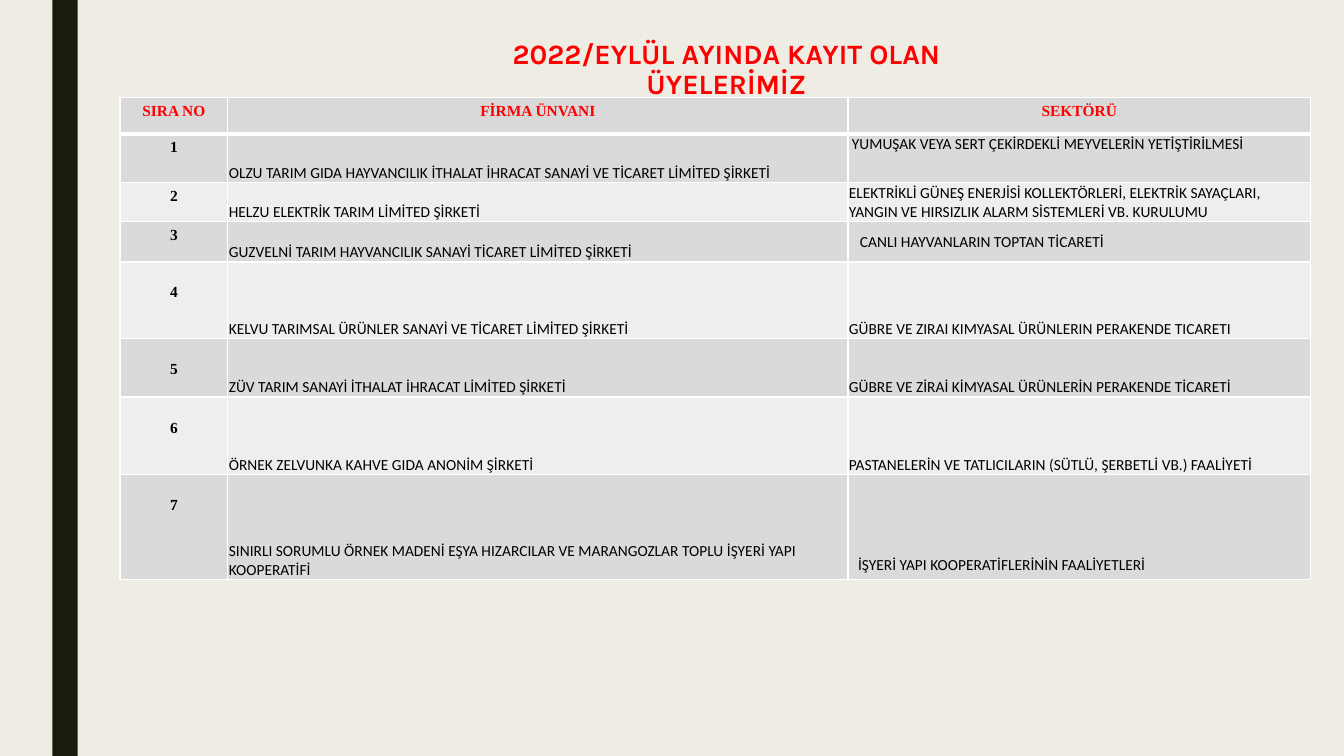
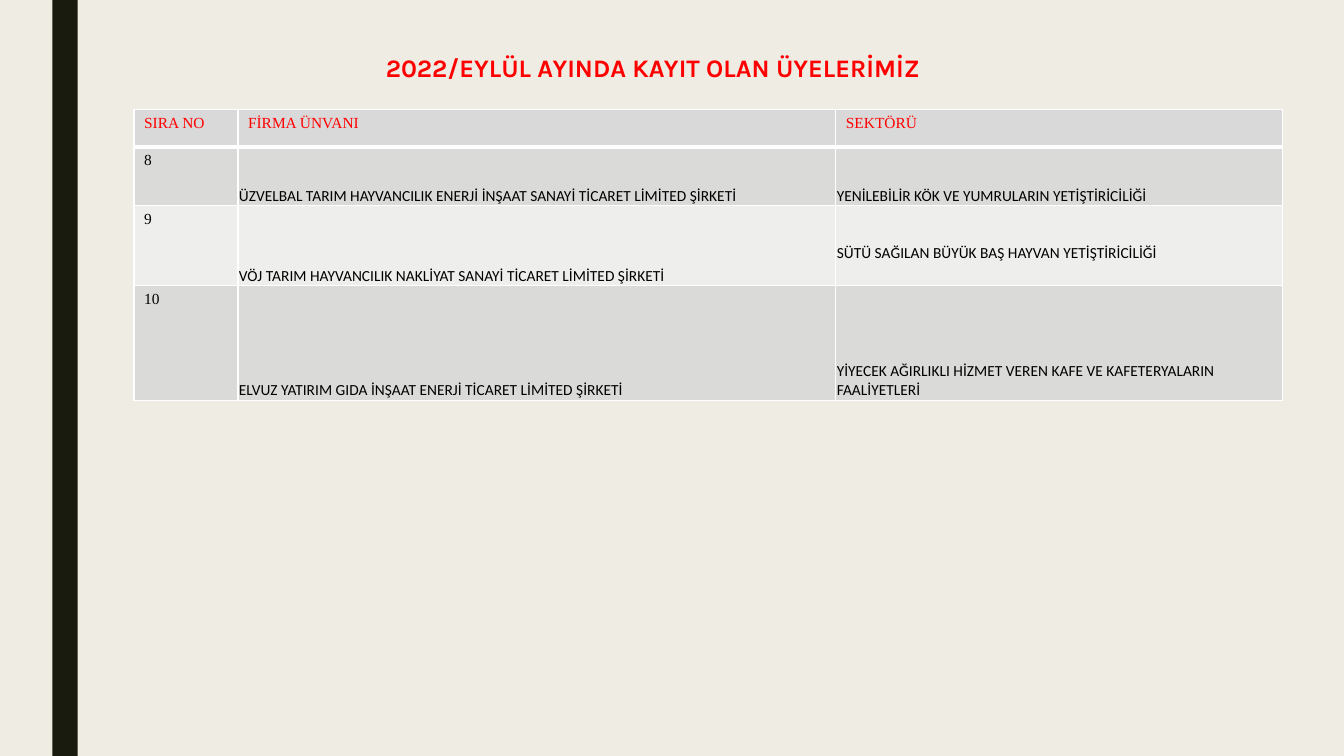
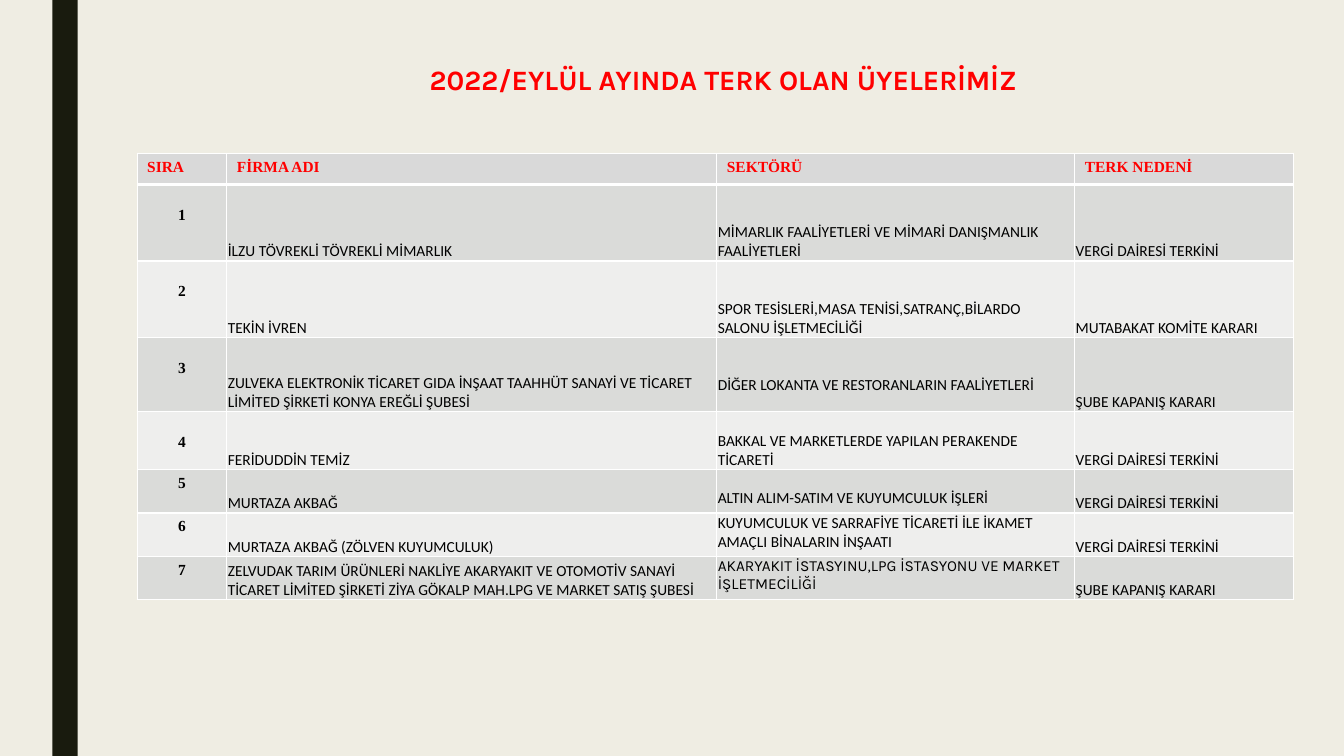
from dataclasses import dataclass

from lxml.etree import SubElement
from pptx import Presentation
from pptx.dml.color import RGBColor
from pptx.enum.shapes import MSO_SHAPE
from pptx.enum.text import MSO_ANCHOR, PP_ALIGN
from pptx.oxml.ns import qn
from pptx.util import Inches, Pt


@dataclass(frozen=True)
class Theme:
    background: str = "EFEDE3"
    band: str = "191B0E"
    accent: str = "FF0000"
    ink: str = "000000"
    border: str = "FFFFFF"
    header_fill: str = "D9D9D9"
    row_fills: tuple = ("DADBD9", "EEEEED")
    title_font: str = "Karla"
    label_font: str = "Times New Roman"
    body_font: str = "Calibri"
    title_size: int = 20
    small_title_size: int = 18
    table_size: int = 11
    thin: int = 1
    thick: int = 3


THEME = Theme()
PADDED = (0.1, 0.05, 0.1, 0.05)
LOWERED = (0.1, 0.22, 0.1, 0.05)


@dataclass(frozen=True)
class Entry:
    """Body text of a table cell; insets are left, top, right, bottom."""
    text: str
    anchor: MSO_ANCHOR = MSO_ANCHOR.BOTTOM
    insets: tuple = (0.01, 0.01, 0.01, 0)
    font: str = THEME.body_font


def top_entry(text, left=0.01, top=0.01, font=THEME.body_font):
    return Entry(text, MSO_ANCHOR.TOP, (left, top, 0.01, 0), font)


def write_text(frame, text, *, font, size, color=THEME.ink, bold=False,
               align=PP_ALIGN.LEFT, line_spacing=None):
    frame.word_wrap = True
    paragraph = frame.paragraphs[0]
    paragraph.alignment = align
    if line_spacing:
        paragraph.line_spacing = line_spacing
    run = paragraph.add_run()
    run.text = text
    run.font.name = font
    run.font.size = Pt(size)
    run.font.bold = bold
    run.font.color.rgb = RGBColor.from_string(color)


def add_member_slide(prs):
    """Add a slide with the shared background and side band."""
    slide = prs.slides.add_slide(prs.slide_layouts[6])
    slide.background.fill.solid()
    slide.background.fill.fore_color.rgb = RGBColor.from_string(THEME.background)
    band = slide.shapes.add_shape(MSO_SHAPE.RECTANGLE, Inches(0.52), 0,
                                  Inches(0.25), prs.slide_height)
    band.shadow.inherit = False
    band.fill.solid()
    band.fill.fore_color.rgb = RGBColor.from_string(THEME.band)
    band.line.fill.background()
    return slide


def add_title(slide, text, left, top, width, height,
              size=THEME.title_size, line_spacing=0.89):
    title = slide.shapes.add_textbox(Inches(left), Inches(top),
                                     Inches(width), Inches(height))
    write_text(title.text_frame, text, font=THEME.title_font, size=size,
               color=THEME.accent, bold=True, align=PP_ALIGN.CENTER,
               line_spacing=line_spacing)


def set_borders(cell, top, bottom):
    properties = cell._tc.get_or_add_tcPr()
    widths = {"lnL": THEME.thin, "lnR": THEME.thin, "lnT": top, "lnB": bottom}
    for position, (side, width) in enumerate(widths.items()):
        line = SubElement(properties, qn(f"a:{side}"), w=str(Pt(width)))
        fill = SubElement(line, qn("a:solidFill"))
        SubElement(fill, qn("a:srgbClr"), val=THEME.border)
        properties.insert(position, line)


def fill_cell(cell, entry, fill, **text_format):
    cell.fill.solid()
    cell.fill.fore_color.rgb = RGBColor.from_string(fill)
    cell.vertical_anchor = entry.anchor
    (cell.margin_left, cell.margin_top,
     cell.margin_right, cell.margin_bottom) = map(Inches, entry.insets)
    write_text(cell.text_frame, entry.text, font=entry.font,
               size=THEME.table_size, **text_format)


def add_member_table(slide, left, top, widths, heights, headers, members, *,
                     first_number=1, lowered=(), bold=True,
                     header_align=PP_ALIGN.LEFT, number_align=PP_ALIGN.CENTER):
    """Number the members and tabulate them; lowered numbers sit a line down."""
    table = slide.shapes.add_table(
        len(heights), len(widths), Inches(left), Inches(top),
        Inches(sum(widths)), Inches(sum(heights))).table
    for column, width in zip(table.columns, widths):
        column.width = Inches(width)
    for row, height in zip(table.rows, heights):
        row.height = Inches(height)

    for column, header in enumerate(headers):
        cell = table.cell(0, column)
        label = Entry(header, MSO_ANCHOR.TOP, PADDED, THEME.label_font)
        fill_cell(cell, label, THEME.header_fill, color=THEME.accent,
                  bold=bold, align=header_align)
        set_borders(cell, THEME.thin, THEME.thick)

    for row, member in enumerate(members, 1):
        number = first_number + row - 1
        fill = THEME.row_fills[(row - 1) % 2]
        label = Entry(str(number), MSO_ANCHOR.TOP,
                      LOWERED if number in lowered else PADDED, THEME.label_font)
        fill_cell(table.cell(row, 0), label, fill, bold=bold, align=number_align)
        for column, value in enumerate(member, 1):
            entry = value if isinstance(value, Entry) else Entry(value)
            fill_cell(table.cell(row, column), entry, fill)
        for cell in table.rows[row].cells:
            set_borders(cell, THEME.thick if row == 1 else THEME.thin, THEME.thin)


JOINED_TITLE = "2022/EYLÜL AYINDA KAYIT OLAN ÜYELERİMİZ"
LEFT_TITLE = "2022/EYLÜL AYINDA TERK OLAN ÜYELERİMİZ"
JOINED_HEADERS = ("SIRA NO", "FİRMA ÜNVANI", "SEKTÖRÜ")
LEFT_HEADERS = ("SIRA", "FİRMA ADI", "SEKTÖRÜ", "TERK NEDENİ")
TAX_OFFICE = "VERGİ DAİRESİ TERKİNİ"
BRANCH_CLOSED = "ŞUBE KAPANIŞ KARARI"

JOINED_FIRST = [
    ("OLZU TARIM GIDA HAYVANCILIK İTHALAT İHRACAT SANAYİ VE TİCARET LİMİTED ŞİRKETİ",
     top_entry("YUMUŞAK VEYA SERT ÇEKİRDEKLİ MEYVELERİN YETİŞTİRİLMESİ", left=0.04)),
    ("HELZU ELEKTRİK TARIM LİMİTED ŞİRKETİ",
     top_entry("ELEKTRİKLİ GÜNEŞ ENERJİSİ KOLLEKTÖRLERİ, ELEKTRİK SAYAÇLARI, "
               "YANGIN VE HIRSIZLIK ALARM SİSTEMLERİ VB. KURULUMU")),
    ("GUZVELNİ TARIM HAYVANCILIK SANAYİ TİCARET LİMİTED ŞİRKETİ",
     Entry("CANLI HAYVANLARIN TOPTAN TİCARETİ", MSO_ANCHOR.MIDDLE,
           (0.12, 0.1, 0.12, 0.1))),
    ("KELVU TARIMSAL ÜRÜNLER SANAYİ VE TİCARET LİMİTED ŞİRKETİ",
     "GÜBRE VE ZIRAI KIMYASAL ÜRÜNLERIN PERAKENDE TICARETI"),
    ("ZÜV TARIM SANAYİ İTHALAT İHRACAT LİMİTED ŞİRKETİ",
     "GÜBRE VE ZİRAİ KİMYASAL ÜRÜNLERİN PERAKENDE TİCARETİ"),
    ("ÖRNEK ZELVUNKA KAHVE GIDA ANONİM ŞİRKETİ",
     "PASTANELERİN VE TATLICILARIN (SÜTLÜ, ŞERBETLİ VB.) FAALİYETİ"),
    ("SINIRLI SORUMLU ÖRNEK MADENİ EŞYA HIZARCILAR VE MARANGOZLAR "
     "TOPLU İŞYERİ YAPI KOOPERATİFİ",
     Entry("İŞYERİ YAPI KOOPERATİFLERİNİN FAALİYETLERİ", insets=PADDED)),
]

JOINED_SECOND = [
    ("ÜZVELBAL TARIM HAYVANCILIK ENERJİ İNŞAAT SANAYİ TİCARET LİMİTED ŞİRKETİ",
     "YENİLEBİLİR KÖK VE YUMRULARIN YETİŞTİRİCİLİĞİ"),
    ("VÖJ TARIM HAYVANCILIK NAKLİYAT SANAYİ TİCARET LİMİTED ŞİRKETİ",
     top_entry("SÜTÜ SAĞILAN BÜYÜK BAŞ HAYVAN YETİŞTİRİCİLİĞİ", top=0.38)),
    ("ELVUZ YATIRIM GIDA İNŞAAT ENERJİ TİCARET LİMİTED ŞİRKETİ",
     "YİYECEK AĞIRLIKLI HİZMET VEREN KAFE VE KAFETERYALARIN FAALİYETLERİ"),
]

LEFT_MEMBERS = [
    ("İLZU TÖVREKLİ TÖVREKLİ MİMARLIK",
     "MİMARLIK FAALİYETLERİ VE MİMARİ DANIŞMANLIK FAALİYETLERİ", TAX_OFFICE),
    ("TEKİN İVREN",
     "SPOR TESİSLERİ,MASA TENİSİ,SATRANÇ,BİLARDO SALONU İŞLETMECİLİĞİ",
     "MUTABAKAT KOMİTE KARARI"),
    ("ZULVEKA ELEKTRONİK TİCARET GIDA İNŞAAT TAAHHÜT SANAYİ VE TİCARET "
     "LİMİTED ŞİRKETİ KONYA EREĞLİ ŞUBESİ",
     top_entry("DİĞER LOKANTA VE RESTORANLARIN FAALİYETLERİ", top=0.38),
     BRANCH_CLOSED),
    ("FERİDUDDİN TEMİZ",
     "BAKKAL VE MARKETLERDE YAPILAN PERAKENDE TİCARETİ", TAX_OFFICE),
    ("MURTAZA AKBAĞ",
     top_entry("ALTIN ALIM-SATIM VE KUYUMCULUK İŞLERİ", top=0.19), TAX_OFFICE),
    ("MURTAZA AKBAĞ (ZÖLVEN KUYUMCULUK)",
     top_entry("KUYUMCULUK VE SARRAFİYE TİCARETİ İLE İKAMET AMAÇLI "
               "BİNALARIN İNŞAATI"), TAX_OFFICE),
    ("ZELVUDAK TARIM ÜRÜNLERİ NAKLİYE AKARYAKIT VE OTOMOTİV SANAYİ "
     "TİCARET LİMİTED ŞİRKETİ ZİYA GÖKALP MAH.LPG VE MARKET SATIŞ ŞUBESİ",
     top_entry("AKARYAKIT İSTASYINU,LPG İSTASYONU VE MARKET İŞLETMECİLİĞİ",
               font=THEME.title_font), BRANCH_CLOSED),
]


def main():
    prs = Presentation()
    prs.slide_width, prs.slide_height = Inches(13.33), Inches(7.5)

    slide = add_member_slide(prs)
    add_title(slide, JOINED_TITLE, 4.26, 0.35, 5.89, 0.46)
    add_member_table(slide, 1.19, 0.97, (1.07, 6.15, 4.59),
                     (0.36, 0.48, 0.39, 0.4, 0.76, 0.58, 0.77, 1.04),
                     JOINED_HEADERS, JOINED_FIRST, lowered=range(4, 8),
                     header_align=PP_ALIGN.CENTER)

    slide = add_member_slide(prs)
    add_member_table(slide, 1.33, 1.09, (1.03, 5.93, 4.43),
                     (0.37, 0.58, 0.79, 1.14), JOINED_HEADERS, JOINED_SECOND,
                     first_number=8, bold=False, number_align=PP_ALIGN.LEFT)
    add_title(slide, JOINED_TITLE, 3.4, 0.47, 6.15, 0.4,
              size=THEME.small_title_size, line_spacing=None)

    slide = add_member_slide(prs)
    add_title(slide, LEFT_TITLE, 3.19, 0.61, 7.97, 0.49)
    add_member_table(slide, 1.36, 1.52, (0.89, 4.86, 3.55, 2.17),
                     (0.31, 0.76, 0.76, 0.73, 0.58, 0.43, 0.43, 0.43),
                     LEFT_HEADERS, LEFT_MEMBERS, lowered=range(1, 5))

    prs.save("out.pptx")


if __name__ == "__main__":
    main()
